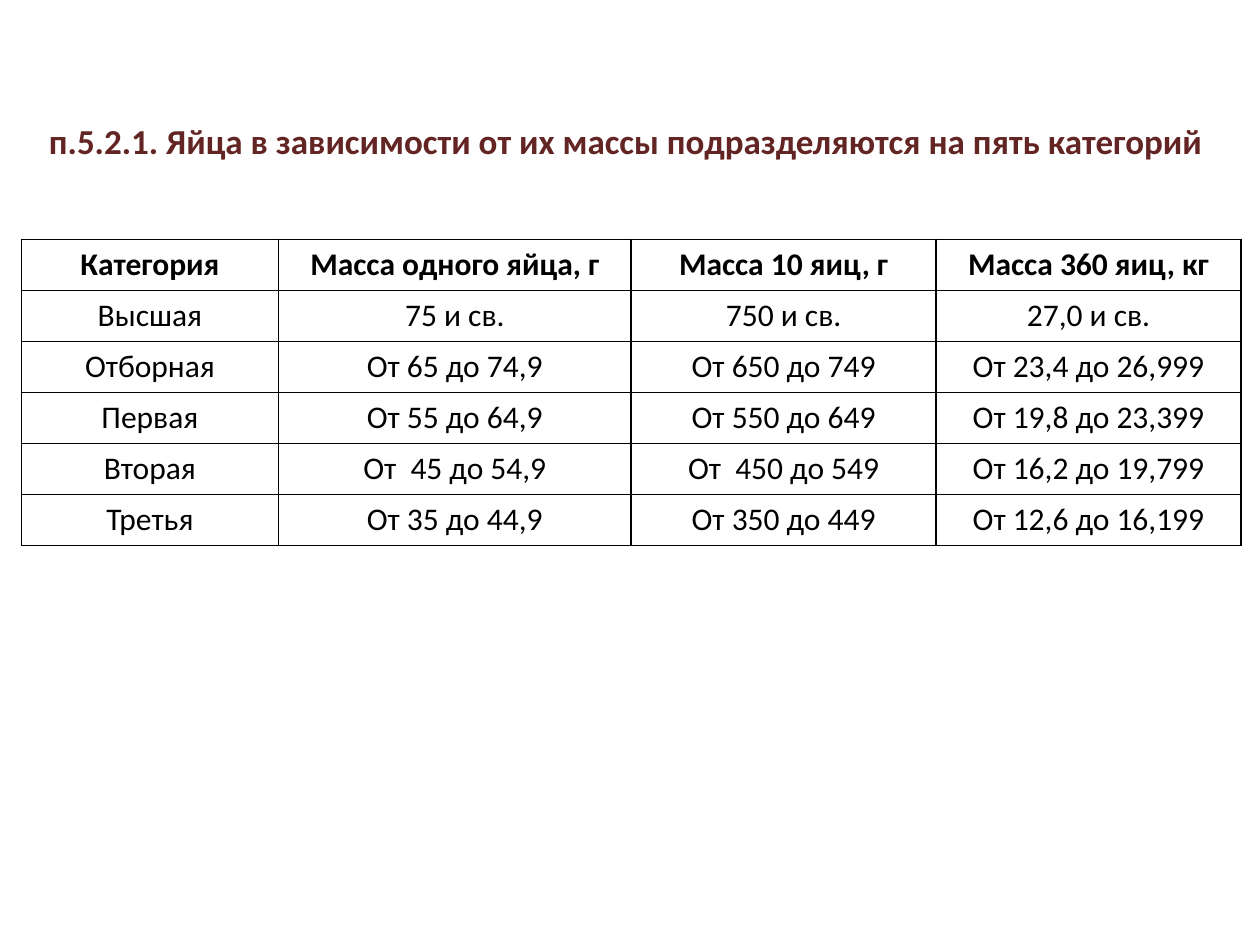
from lxml import etree
from pptx import Presentation
from pptx import util as u
from pptx.dml.color import RGBColor
from pptx.enum import text
from pptx.oxml.ns import qn

COLORS = {"title": "632523", "text": "000000", "border": "000000"}
COLUMN_WIDTHS = [2.04, 2.8, 2.42, 2.42]
EGG_CATEGORIES = [
    ["Категория", "Масса одного яйца, г", "Масса 10 яиц, г", "Масса 360 яиц, кг"],
    ["Высшая", "75 и св.", "750 и св.", "27,0 и св."],
    ["Отборная", "От 65 до 74,9", "От 650 до 749", "От 23,4 до 26,999"],
    ["Первая", "От 55 до 64,9", "От 550 до 649", "От 19,8 до 23,399"],
    ["Вторая", "От  45 до 54,9", "От  450 до 549", "От 16,2 до 19,799"],
    ["Третья", "От 35 до 44,9", "От 350 до 449", "От 12,6 до 16,199"],
]


class SlideBuilder:
    font_name = "Calibri"
    border_width = u.Pt(1)

    def __init__(self, slide):
        self.slide = slide

    def set_text(self, text_frame, content, size, color, bold):
        text_frame.text = content
        paragraph = text_frame.paragraphs[0]
        paragraph.alignment = text.PP_ALIGN.CENTER
        font = paragraph.runs[0].font
        font.name = self.font_name
        font.size = u.Pt(size)
        font.bold = bold
        font.color.rgb = RGBColor.from_string(COLORS[color])

    def title(self, content, left, top, width, height):
        shape = self.slide.shapes.add_textbox(*map(u.Inches, (left, top, width, height)))
        shape.text_frame.word_wrap = True
        shape.text_frame.auto_size = text.MSO_AUTO_SIZE.SHAPE_TO_FIT_TEXT
        self.set_text(shape.text_frame, content, 20, "title", True)

    def border(self, cell):
        """Draw a solid line on all four sides; call before setting the fill."""
        properties = cell._tc.get_or_add_tcPr()
        for side in ("lnL", "lnR", "lnT", "lnB"):
            line = etree.SubElement(properties, qn(f"a:{side}"), w=str(self.border_width))
            fill = etree.SubElement(line, qn("a:solidFill"))
            etree.SubElement(fill, qn("a:srgbClr"), val=COLORS["border"])

    def table(self, rows, column_widths, left, top, height):
        frame = self.slide.shapes.add_table(
            len(rows), len(column_widths), u.Inches(left), u.Inches(top),
            u.Inches(sum(column_widths)), u.Inches(height))
        table = frame.table
        table.horz_banding = False
        for column, width in zip(table.columns, column_widths):
            column.width = u.Inches(width)
        for row_index, row in enumerate(rows):
            for column_index, content in enumerate(row):
                cell = table.cell(row_index, column_index)
                self.set_text(cell.text_frame, content, 18, "text", row_index == 0)
                self.border(cell)
                cell.fill.background()


def main():
    presentation = Presentation()
    presentation.slide_width = u.Inches(10)
    presentation.slide_height = u.Inches(7.5)
    builder = SlideBuilder(presentation.slides.add_slide(presentation.slide_layouts[6]))
    builder.title("п.5.2.1. Яйца в зависимости от их массы подразделяются на пять категорий ",
                  0, 0.9, 10, 0.44)
    builder.table(EGG_CATEGORIES, COLUMN_WIDTHS, 0.17, 1.9, 2.43)
    presentation.save("out.pptx")


if __name__ == "__main__":
    main()
